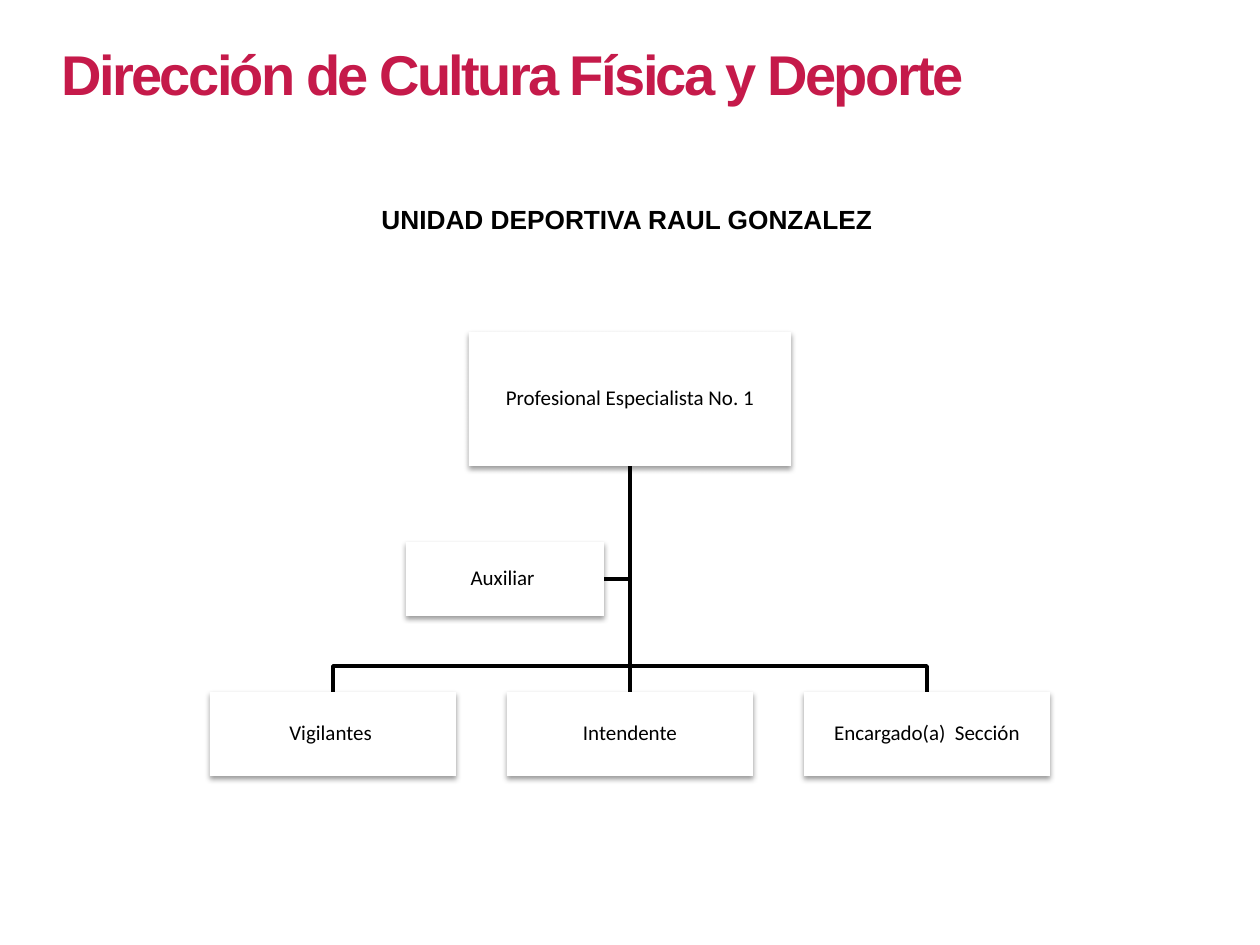
from lxml.etree import SubElement
from pptx import Presentation
from pptx.dml.color import RGBColor
from pptx.enum.shapes import MSO_CONNECTOR, MSO_SHAPE
from pptx.enum.text import MSO_ANCHOR, MSO_AUTO_SIZE, PP_ALIGN
from pptx.oxml.ns import qn
from pptx.util import Inches, Pt

BLACK = RGBColor(0x00, 0x00, 0x00)
WHITE = RGBColor(0xFF, 0xFF, 0xFF)
CRIMSON = RGBColor(0xC5, 0x1A, 0x4A)

PX_PER_INCH = 126
CENTER = 630
STEM_TOP = 466
AUX_Y = 579
BUS_Y = 666
ROW_TOP, ROW_WIDTH, ROW_HEIGHT, ROW_STEP = 692, 246, 84, 297
ROLES = ["Vigilantes ", "Intendente", "Encargado(a)  Sección"]


def px(n):
    return Inches(n / PX_PER_INCH)


def write(tf, text, *, size, font, color=BLACK, bold=False, spacing=None,
          align=PP_ALIGN.LEFT, line_spacing=None):
    p = tf.paragraphs[0]
    p.alignment = align
    p.line_spacing = line_spacing
    r = p.add_run()
    r.text = text
    r.font.size = Pt(size)
    r.font.name = font
    r.font.bold = bold
    r.font.color.rgb = color
    if spacing is not None:
        r._r.get_or_add_rPr().set("spc", str(int(spacing * 100)))


def add_label(s, text, x, y, w, h, wrap=True, **fmt):
    tf = s.shapes.add_textbox(px(x), px(y), px(w), px(h)).text_frame
    tf.word_wrap = wrap
    tf.auto_size = MSO_AUTO_SIZE.SHAPE_TO_FIT_TEXT
    write(tf, text, font="Arial", bold=True, **fmt)


def add_soft_shadow(sp):
    sp.shadow.inherit = False
    effects = sp._element.spPr.find(qn("a:effectLst"))
    shadow = SubElement(effects, qn("a:outerShdw"), blurRad=str(Pt(3.1)),
                        dist=str(Pt(1.6)), dir="5400000", rotWithShape="0")
    color = SubElement(shadow, qn("a:srgbClr"), val=str(BLACK))
    SubElement(color, qn("a:alpha"), val="38000")


def add_position(s, text, x, y, w, h):
    """Draw one box of the organisation chart."""
    sp = s.shapes.add_shape(MSO_SHAPE.RECTANGLE, px(x), px(y), px(w), px(h))
    sp.fill.solid()
    sp.fill.fore_color.rgb = WHITE
    sp.line.fill.background()
    add_soft_shadow(sp)
    tf = sp.text_frame
    tf.word_wrap = True
    tf.vertical_anchor = MSO_ANCHOR.MIDDLE
    tf.margin_left = tf.margin_right = tf.margin_top = tf.margin_bottom = px(1)
    write(tf, text, size=12, font="Calibri", align=PP_ALIGN.CENTER,
          line_spacing=0.9)


def style_line(sp):
    sp.line.color.rgb = BLACK
    sp.line.width = Pt(2)


def add_elbow(s, *points):
    start, *rest = [(px(x), px(y)) for x, y in points]
    builder = s.shapes.build_freeform(*start)
    builder.add_line_segments(rest, close=False)
    sp = builder.convert_to_shape()
    sp.fill.background()
    style_line(sp)
    sp.shadow.inherit = False


def add_stem(s, x, top, bottom):
    sp = s.shapes.add_connector(MSO_CONNECTOR.STRAIGHT,
                                px(x), px(top), px(x), px(bottom))
    style_line(sp)
    SubElement(sp._element.spPr, qn("a:effectLst"))


def main():
    prs = Presentation()
    prs.slide_width, prs.slide_height = Inches(10), Inches(7.5)
    s = prs.slides.add_slide(prs.slide_layouts[6])

    add_label(s, "UNIDAD DEPORTIVA RAUL GONZALEZ", 369, 197, 522, 44,
              wrap=False, size=15)
    add_label(s, "Dirección de Cultura Física y Deporte", 49, 33, 969, 81,
              size=32, color=CRIMSON, spacing=-1.5)

    add_elbow(s, (CENTER, STEM_TOP), (CENTER, AUX_Y), (604, AUX_Y))
    for end in (CENTER - ROW_STEP, CENTER + ROW_STEP):
        add_elbow(s, (CENTER, STEM_TOP), (CENTER, BUS_Y),
                  (end, BUS_Y), (end, ROW_TOP))
    add_stem(s, CENTER, STEM_TOP, ROW_TOP)

    add_position(s, "Profesional Especialista No. 1", 469, 332, 322, 134)
    for i, role in enumerate(ROLES):
        left = CENTER + (i - 1) * ROW_STEP - ROW_WIDTH // 2
        add_position(s, role, left, ROW_TOP, ROW_WIDTH, ROW_HEIGHT)
    add_position(s, "Auxiliar ", 406, 542, 198, 74)

    prs.save("out.pptx")


if __name__ == "__main__":
    main()
